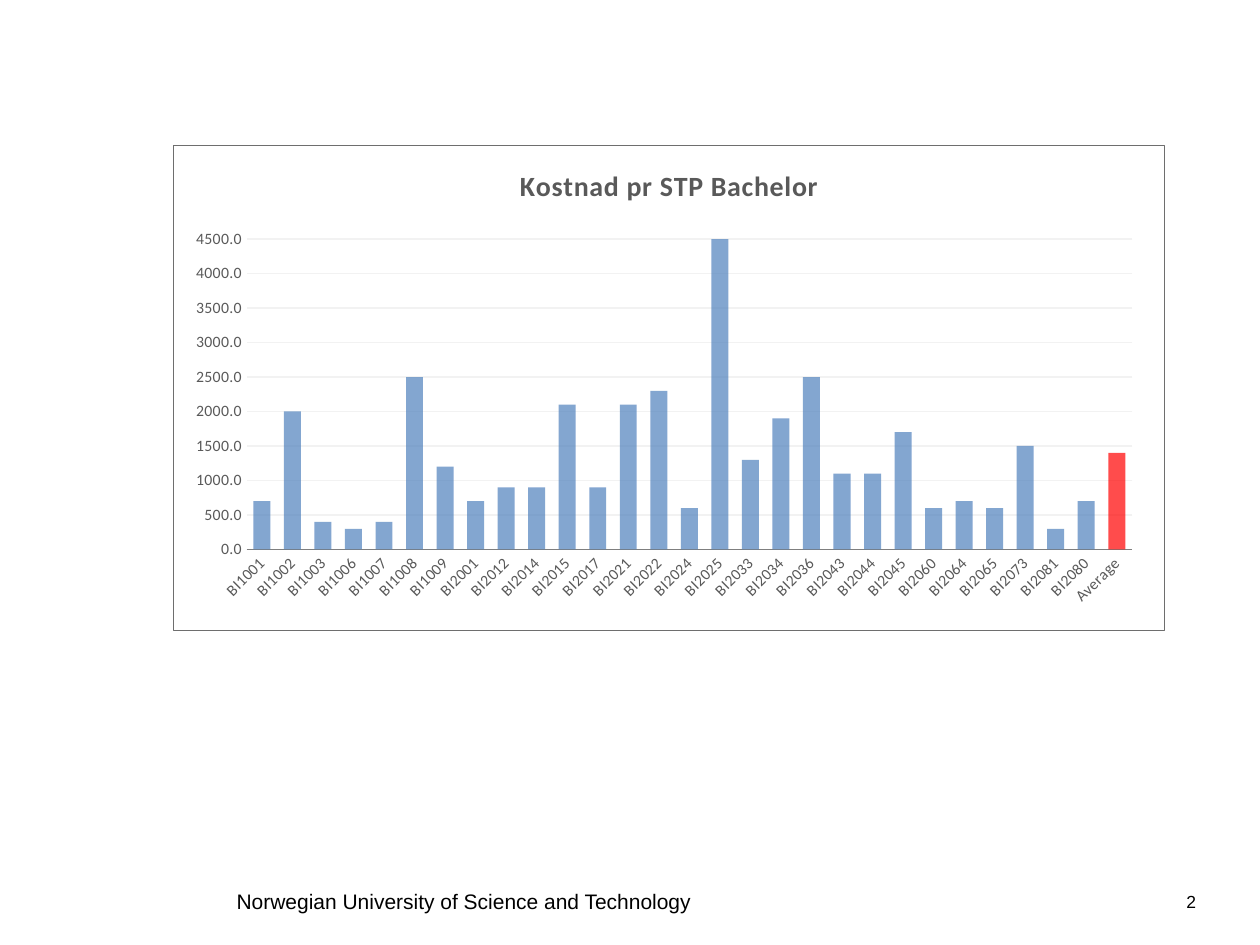
from lxml import etree
from pptx import Presentation
from pptx.chart.data import CategoryChartData
from pptx.dml.color import RGBColor
from pptx.enum import chart as charts, text
from pptx.oxml import parse_xml
from pptx.oxml.ns import nsdecls, qn
from pptx.util import Inches, Pt

COLORS = {
    "text": "000000", "label": "595959", "grid": "F2F2F2", "axis": "7F7F7F",
    "border": "6E6E6E", "course": "4F81BD", "average": "FF0000",
}
COSTS = {
    "BI1001": 700, "BI1002": 2000, "BI1003": 400, "BI1006": 300, "BI1007": 400,
    "BI1008": 2500, "BI1009": 1200, "BI2001": 700, "BI2012": 900, "BI2014": 900,
    "BI2015": 2100, "BI2017": 900, "BI2021": 2100, "BI2022": 2300, "BI2024": 600,
    "BI2025": 4500, "BI2033": 1300, "BI2034": 1900, "BI2036": 2500, "BI2043": 1100,
    "BI2044": 1100, "BI2045": 1700, "BI2060": 600, "BI2064": 700, "BI2065": 600,
    "BI2073": 1500, "BI2081": 300, "BI2080": 700, "Average": 1400,
}


def color(name):
    return RGBColor.from_string(COLORS[name])


def style_font(font, name, size, color_name, bold=False, spacing=0):
    """Format a font; spacing is in hundredths of a point."""
    font.name = name
    font.size = Pt(size)
    font.bold = bold
    font.color.rgb = color(color_name)
    if spacing:
        font._element.set("spc", str(spacing))


def add_label(slide, words, left, top, width, height, size, alignment):
    frame = slide.shapes.add_textbox(
        Inches(left), Inches(top), Inches(width), Inches(height)).text_frame
    frame.word_wrap = True
    frame.text = words
    paragraph = frame.paragraphs[0]
    paragraph.alignment = alignment
    style_font(paragraph.runs[0].font, "Arial", size, "text")


def fill_translucent(chart_format, color_name):
    chart_format.fill.solid()
    chart_format.fill.fore_color.rgb = color(color_name)
    for rgb in chart_format.fill._xPr.iter(qn("a:srgbClr")):
        etree.SubElement(rgb, qn("a:alpha"), val="70000")


def set_plot_layout(chart, left, top, width, height):
    """Fix the inner plot area, in fractions of the chart."""
    plot_area = chart._chartSpace.chart.plotArea
    for layout in plot_area.findall(qn("c:layout")):
        plot_area.remove(layout)
    parts = [("layoutTarget", "inner"), ("xMode", "edge"), ("yMode", "edge"),
             ("x", left), ("y", top), ("w", width), ("h", height)]
    inner = "".join(f'<c:{tag} val="{value}"/>' for tag, value in parts)
    plot_area.insert(0, parse_xml(
        f'<c:layout {nsdecls("c")}><c:manualLayout>{inner}</c:manualLayout></c:layout>'))


def set_border(chart):
    chart._chartSpace.chart.addnext(parse_xml(
        f'<c:spPr {nsdecls("c", "a")}><a:solidFill><a:srgbClr val="FFFFFF"/></a:solidFill>'
        f'<a:ln w="{Pt(0.75)}"><a:solidFill><a:srgbClr val="{COLORS["border"]}"/>'
        '</a:solidFill></a:ln></c:spPr>'))


def style_title(chart):
    frame = chart.chart_title.text_frame
    frame.text = "Kostnad pr STP Bachelor"
    style_font(frame.paragraphs[0].runs[0].font, "Calibri", 16, "label",
               bold=True, spacing=50)
    chart.chart_title.include_in_layout = False


def style_axes(chart):
    category_axis, value_axis = chart.category_axis, chart.value_axis
    for axis in (category_axis, value_axis):
        axis.major_tick_mark = axis.minor_tick_mark = charts.XL_TICK_MARK.NONE
        style_font(axis.tick_labels.font, "Calibri", 9, "label", spacing=20)
    category_axis.format.line.color.rgb = color("axis")
    category_axis.format.line.width = Pt(0.75)
    category_axis._element.find(qn("c:txPr")).find(qn("a:bodyPr")).set("rot", "-2700000")

    value_axis.minimum_scale, value_axis.maximum_scale = 0, 4500
    value_axis.major_unit = 500
    value_axis.format.line.fill.background()
    value_axis.tick_labels.number_format = "0.0"
    value_axis.tick_labels.number_format_is_linked = False
    value_axis.major_gridlines.format.line.color.rgb = color("grid")
    value_axis.major_gridlines.format.line.width = Pt(0.75)


def add_cost_chart(slide):
    data = CategoryChartData(number_format="0.0")
    data.categories = list(COSTS)
    data.add_series("Series 1", list(COSTS.values()))
    chart = slide.shapes.add_chart(
        charts.XL_CHART_TYPE.COLUMN_CLUSTERED,
        Inches(1.37), Inches(1.15), Inches(7.88), Inches(3.86), data).chart
    style_font(chart.font, "Calibri", 10, "text")
    chart.has_legend = False
    style_title(chart)
    style_axes(chart)
    set_plot_layout(chart, 0.074, 0.193, 0.893, 0.64)
    set_border(chart)

    plot = chart.plots[0]
    plot.gap_width, plot.overlap = 80, 25
    plot.vary_by_categories = False
    series = plot.series[0]
    series.invert_if_negative = False
    fill_translucent(series.format, "course")
    fill_translucent(series.points[len(COSTS) - 1].format, "average")


def main():
    presentation = Presentation()
    presentation.slide_width, presentation.slide_height = Inches(10), Inches(7.5)
    slide = presentation.slides.add_slide(presentation.slide_layouts[6])
    add_label(slide, "Norwegian University of Science and Technology",
              1.78, 7, 4.17, 0.3, 12, text.PP_ALIGN.LEFT)
    add_label(slide, "2", 9.27, 7.02, 0.37, 0.4, 10, text.PP_ALIGN.CENTER)
    add_cost_chart(slide)
    presentation.save("out.pptx")


if __name__ == "__main__":
    main()
